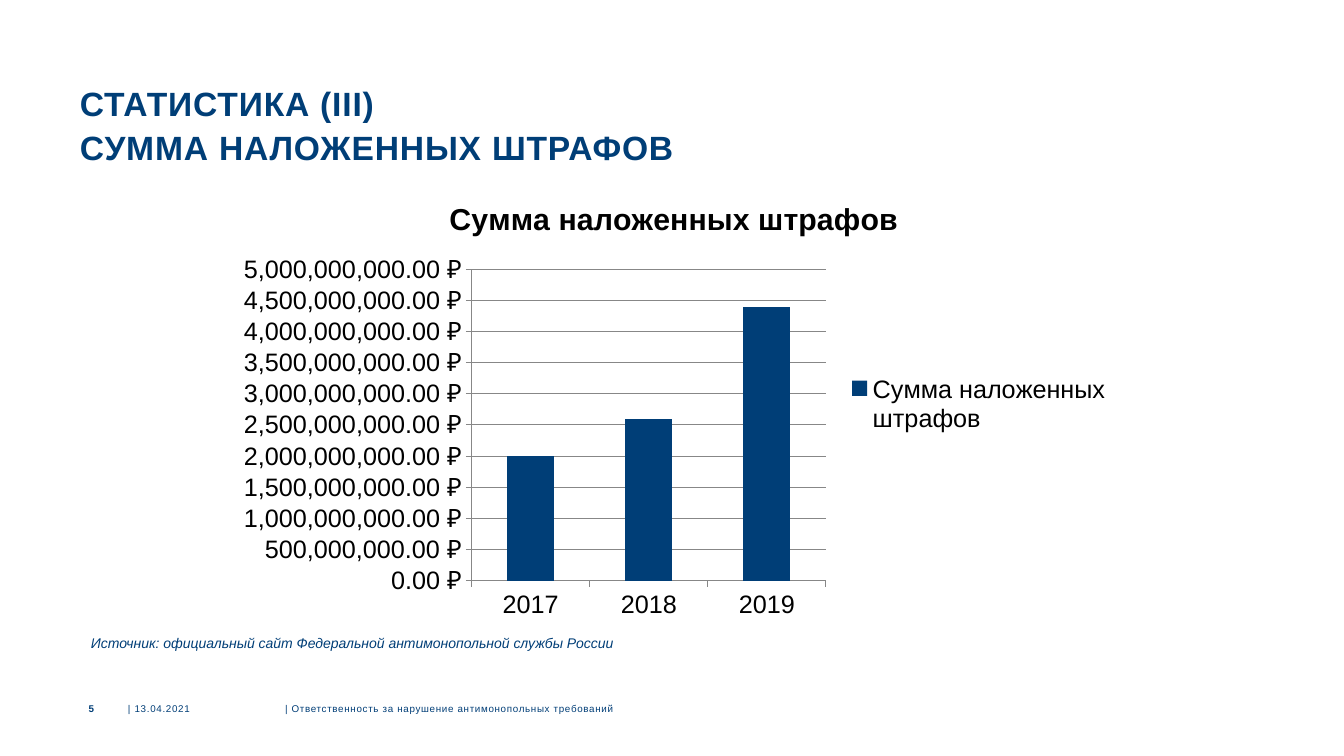
"""Build the slide on the total of imposed fines."""
from dataclasses import dataclass

from pptx import Presentation
from pptx.chart.data import CategoryChartData
from pptx.dml.color import RGBColor
from pptx.enum.chart import XL_CHART_TYPE, XL_LEGEND_POSITION, XL_TICK_MARK
from pptx.enum.shapes import MSO_SHAPE
from pptx.enum.text import MSO_ANCHOR, PP_ALIGN
from pptx.util import Emu, Pt


@dataclass(frozen=True)
class Theme:
    """Hold the colours, font and type sizes of the slide."""
    navy: RGBColor = RGBColor(0x00, 0x3E, 0x77)
    black: RGBColor = RGBColor(0, 0, 0)
    white: RGBColor = RGBColor(255, 255, 255)
    grid: RGBColor = RGBColor(0x87, 0x87, 0x87)
    font: str = "Arial"
    title: float = 24
    title_leading: float = 31
    chart: float = 18
    chart_title: float = 21.6
    source: float = 10
    footer: float = 7


THEME = Theme()
PX_PER_INCH = 100.8
FOOTER_TOP, FOOTER_HEIGHT = 701, 16
FINES = {"2017": 2_000_000_000, "2018": 2_600_000_000, "2019": 4_400_000_000}
FINES_NAME = "Сумма наложенных штрафов"


def px(length):
    """Turn a length in px into EMU."""
    return Emu(round(length * 914400 / PX_PER_INCH))


def style_font(font, size, color, bold=False, italic=False):
    """Apply the theme font with the given size, colour and emphasis."""
    font.name, font.size, font.bold, font.italic = THEME.font, Pt(size), bold, italic
    font.color.rgb = color


def write(frame, text, size, spacing=0, bold=False, italic=False):
    """Put navy text into a frame and return its paragraph."""
    frame.text = text
    para = frame.paragraphs[0]
    for span in para.runs:
        style_font(span.font, size, THEME.navy, bold, italic)
        if spacing:
            span.font._element.set("spc", str(spacing))
    return para


def add_text(page, area, text, size, wrap=True, anchor=MSO_ANCHOR.MIDDLE, **look):
    """Add a text box without margins and return its paragraph."""
    frame = page.shapes.add_textbox(*map(px, area)).text_frame
    frame.margin_left = frame.margin_right = frame.margin_top = frame.margin_bottom = 0
    frame.word_wrap = wrap
    frame.vertical_anchor = anchor
    return write(frame, text, size, **look)


def add_source(page, area, text):
    """Add the white bar that names the source of the data."""
    bar = page.shapes.add_shape(MSO_SHAPE.RECTANGLE, *map(px, area))
    bar.shadow.inherit = False
    bar.fill.solid()
    bar.fill.fore_color.rgb = THEME.white
    bar.line.color.rgb = THEME.white
    bar.line.width = Pt(1)
    bar.text_frame.word_wrap = True
    bar.text_frame.vertical_anchor = MSO_ANCHOR.MIDDLE
    write(bar.text_frame, text, THEME.source, italic=True).alignment = PP_ALIGN.LEFT


def style_axis(axis):
    """Give an axis outside ticks and a thin grey line."""
    axis.major_tick_mark = XL_TICK_MARK.OUTSIDE
    axis.minor_tick_mark = XL_TICK_MARK.NONE
    axis.format.line.color.rgb = THEME.grid
    axis.format.line.width = Pt(0.75)
    style_font(axis.tick_labels.font, THEME.chart, THEME.black)


def add_fines_chart(page, area):
    """Add the column chart of fines by year."""
    data = CategoryChartData()
    data.categories = FINES.keys()
    data.add_series(FINES_NAME, FINES.values())
    chart = page.shapes.add_chart(
        XL_CHART_TYPE.COLUMN_CLUSTERED, *map(px, area), data).chart
    style_font(chart.font, THEME.chart, THEME.black)

    chart.has_title = True
    heading = chart.chart_title
    heading.include_in_layout = False
    heading.text_frame.text = FINES_NAME
    span = heading.text_frame.paragraphs[0].runs[0]
    style_font(span.font, THEME.chart_title, THEME.black, bold=True)

    chart.has_legend = True
    chart.legend.position = XL_LEGEND_POSITION.RIGHT
    chart.legend.include_in_layout = False
    style_font(chart.legend.font, THEME.chart, THEME.black)

    style_axis(chart.category_axis)
    amounts = chart.value_axis
    style_axis(amounts)
    amounts.has_major_gridlines = True
    amounts.major_gridlines.format.line.color.rgb = THEME.grid
    amounts.major_gridlines.format.line.width = Pt(0.75)
    amounts.minimum_scale, amounts.maximum_scale = 0, 5_000_000_000
    amounts.major_unit = 500_000_000
    amounts.tick_labels.number_format = '#,##0.00\\ "₽"'
    amounts.tick_labels.number_format_is_linked = False

    plot = chart.plots[0]
    plot.gap_width = 150
    plot.vary_by_categories = False
    fill = plot.series[0].format.fill
    fill.solid()
    fill.fore_color.rgb = THEME.navy


def add_footer(page, number, date, topic):
    """Add the page number, date and topic along the bottom."""
    add_text(page, (80, FOOTER_TOP, 14, FOOTER_HEIGHT), number, THEME.footer,
             wrap=False, bold=True).alignment = PP_ALIGN.RIGHT
    add_text(page, (128, FOOTER_TOP, 154, FOOTER_HEIGHT), f"| {date}", THEME.footer,
             wrap=False, spacing=50).alignment = PP_ALIGN.LEFT
    add_text(page, (285, FOOTER_TOP, 593, FOOTER_HEIGHT), f"| {topic}", THEME.footer,
             spacing=50)


def main():
    """Build the slide and save the deck."""
    deck = Presentation()
    deck.slide_width, deck.slide_height = px(1344), px(756)
    page = deck.slides.add_slide(deck.slide_layouts[6])
    title = add_text(page, (80, 80, 1185, 88),
                     "СТАТИСТИКА (III)\vСУММА НАЛОЖЕННЫХ ШТРАФОВ", THEME.title,
                     anchor=MSO_ANCHOR.TOP, spacing=60, bold=True)
    title.line_spacing = Pt(THEME.title_leading)
    add_fines_chart(page, (226, 180, 896, 448))
    add_source(page, (81, 620, 797, 46),
               "Источник: официальный сайт Федеральной антимонопольной службы России")
    add_footer(page, "5", "13.04.2021",
               "Ответственность за нарушение антимонопольных требований")
    deck.save("out.pptx")


if __name__ == "__main__":
    main()
